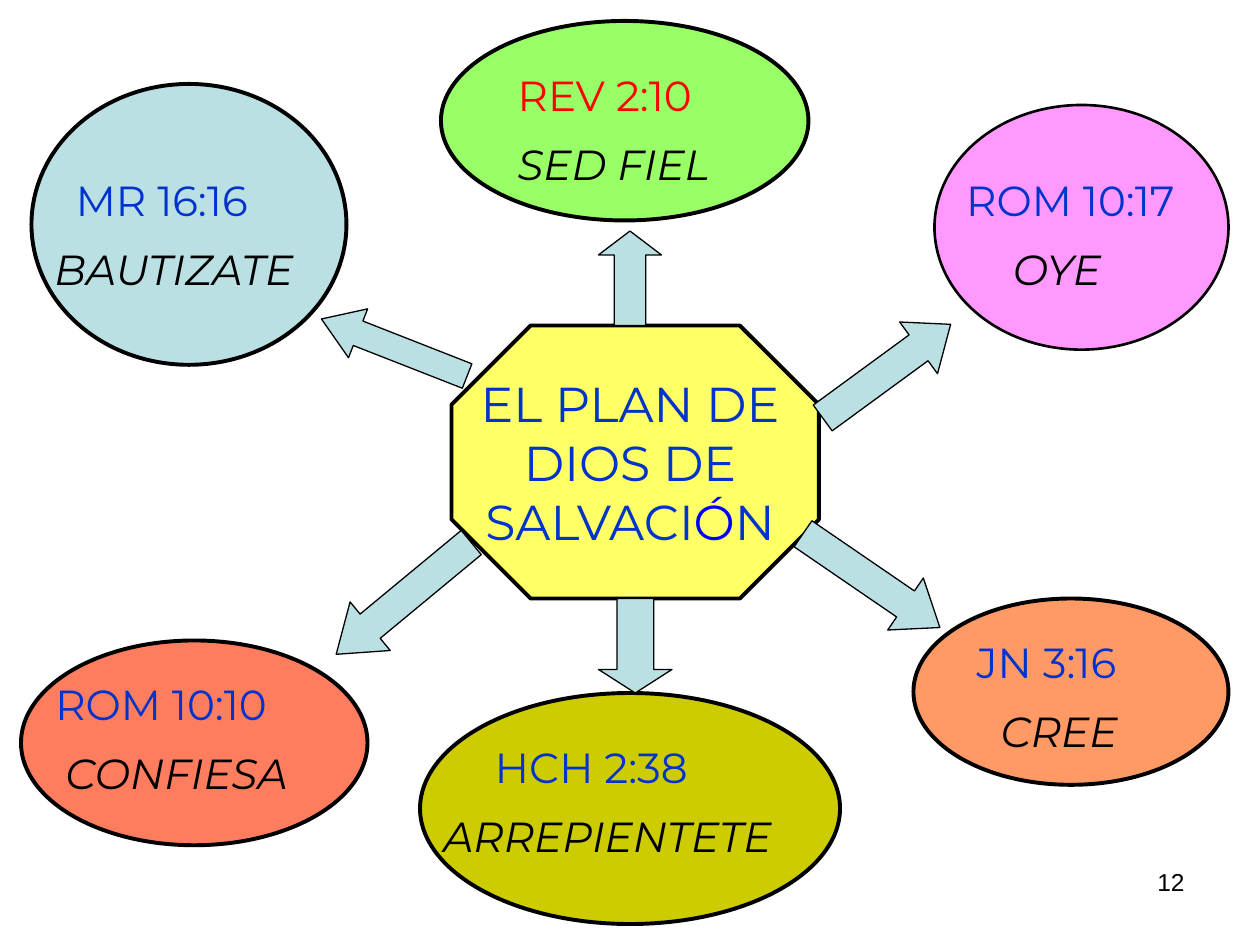
from pptx import Presentation
from pptx.dml.color import RGBColor
from pptx.enum.shapes import MSO_SHAPE as SHAPE
from pptx.enum.text import MSO_ANCHOR as ANCHOR, MSO_AUTO_SIZE as AUTO, PP_ALIGN as ALIGN
from pptx.util import Inches, Pt

COLORS = {
    "black": "000000", "blue": "0033CC", "accent": "0000FF", "red": "FF0000",
    "coral": "FF7D5F", "pink": "FF99FF", "olive": "CCCC00", "orange": "FF9966",
    "aqua": "BBE0E3", "green": "99FF66", "yellow": "FFFF66",
}


class Deck:
    """Style and current slide; lengths are cells of a 120 x 90 grid."""
    font = "Montserrat"
    columns, rows = 120, 90

    def __init__(self):
        self.prs = Presentation()
        self.prs.slide_width, self.prs.slide_height = Inches(10), Inches(7.5)
        self.s = self.prs.slides.add_slide(self.prs.slide_layouts[5])

    def box(self, x, y, w, h):
        cw = self.prs.slide_width / self.columns
        ch = self.prs.slide_height / self.rows
        return int(x * cw), int(y * ch), int(w * cw), int(h * ch)

    def color(self, name):
        return RGBColor.from_string(COLORS[name])

    def style(self, r, size, color, italic=False, font=None):
        r.font.name, r.font.size = font or self.font, Pt(size)
        r.font.italic = italic
        r.font.color.rgb = self.color(color)

    def shape(self, kind, box, fill, line=2.25, rotation=0, adj=()):
        sp = self.s.shapes.add_shape(kind, *self.box(*box))
        sp.shadow.inherit = False
        sp.fill.solid()
        sp.fill.fore_color.rgb = self.color(fill)
        sp.line.color.rgb = self.color("black")
        sp.line.width = Pt(line)
        sp.rotation = rotation
        for i, value in enumerate(adj):
            sp.adjustments[i] = value

    def title(self, box, parts):
        sp = self.s.shapes.title
        sp.left, sp.top, sp.width, sp.height = self.box(*box)
        tf = sp.text_frame
        tf.word_wrap, tf.auto_size = True, AUTO.NONE
        tf.vertical_anchor = ANCHOR.TOP
        p = tf.paragraphs[0]
        p.alignment = ALIGN.CENTER
        for text, color in parts:
            r = p.add_run()
            r.text = text
            self.style(r, 28, color)
        # Bring the title in front of the shapes drawn so far
        sp.element.getparent().append(sp.element)

    def text(self, box):
        tf = self.s.shapes.add_textbox(*self.box(*box)).text_frame
        tf.word_wrap = True
        return tf

    def step(self, box, lines, color, indents):
        """Verse above an italic action, each with its own left indent."""
        tf = self.text(box)
        tf.text = "\n".join(lines)
        for i, (p, indent) in enumerate(zip(tf.paragraphs, indents)):
            p.space_before = Pt(11 * i)
            p._p.get_or_add_pPr().set("marL", str(Inches(indent)))
            self.style(p.runs[0], 24, "black" if i else color, italic=bool(i))

    def number(self, box, value):
        p = self.text(box).paragraphs[0]
        p.text = value
        p.alignment = ALIGN.RIGHT
        self.style(p.runs[0], 14, "black", font="Arial")


# Ellipse box, fill, line width
ELLIPSES = [
    ((2, 61, 33, 19.5), "coral", 2.25),
    ((89, 10, 28, 23.3), "pink", 1.5),
    ((40, 66, 40, 22), "olive", 2.25),
    ((87, 57, 30, 17.75), "orange", 2.25),
    ((3, 8, 30, 26.75), "aqua", 2.25),
    ((42, 2, 35, 19), "green", 2.25),
]
# Arrow kind, box, rotation, head length
ARROWS = [
    (SHAPE.RIGHT_ARROW, (76.9, 32.3, 15.1, 6.1), 323.8, 0.62),
    (SHAPE.RIGHT_ARROW, (75.1, 52.3, 15.8, 6), 34.4, 0.66),
    (SHAPE.RIGHT_ARROW, (56, 58, 9, 7), 90, 0.32),
    (SHAPE.LEFT_ARROW, (30.1, 54, 16.7, 6), 320.4, 0.7),
    (SHAPE.LEFT_ARROW, (30.1, 30.6, 14.9, 5), 21.4, 0.75),
    (SHAPE.UP_ARROW, (57, 22, 6, 9), 0, 0.38),
]
# Text left, top, width; verse and action; verse colour; indents in inches
STEPS = [
    ((90, 16, 27), ("ROM 10:17", "OYE"), "blue", (0.07, 0.44)),
    ((91, 60, 24), ("JN 3:16", "CREE"), "blue", (0.07, 0.26)),
    ((39, 70, 43), ("HCH 2:38", "ARREPIENTETE"), "blue", (0.58, 0.17)),
    ((3, 64, 33), ("ROM 10:10", "CONFIESA"), "blue", (0.09, 0.17)),
    ((4, 16, 29), ("MR 16:16", "BAUTIZATE"), "blue", (0.17, 0)),
    ((45, 6, 34), ("REV 2:10", "SED FIEL"), "red", (0.26, 0.26)),
]
STEP_HEIGHT = 13.3


def main():
    deck = Deck()
    # Outer ellipses
    for box, fill, line in ELLIPSES:
        deck.shape(SHAPE.OVAL, box, fill, line)
    # Central octagon with the title
    deck.shape(SHAPE.OCTAGON, (43, 31, 35, 26), "yellow", adj=(0.29,))
    deck.title((43, 35, 34, 18.1), [
        ("EL PLAN DE DIOS DE SALVACI", "blue"), ("Ó", "accent"), ("N", "blue")])
    # Arrows from the centre
    for kind, box, rotation, head in ARROWS:
        deck.shape(kind, box, "aqua", 0.75, rotation, (0.5, head))
    # Step labels
    for place, lines, color, indents in STEPS:
        deck.step((*place, STEP_HEIGHT), lines, color, indents)
    # Page number
    deck.number((86, 82, 28, 6.25), "12")
    deck.prs.save("out.pptx")


if __name__ == "__main__":
    main()
